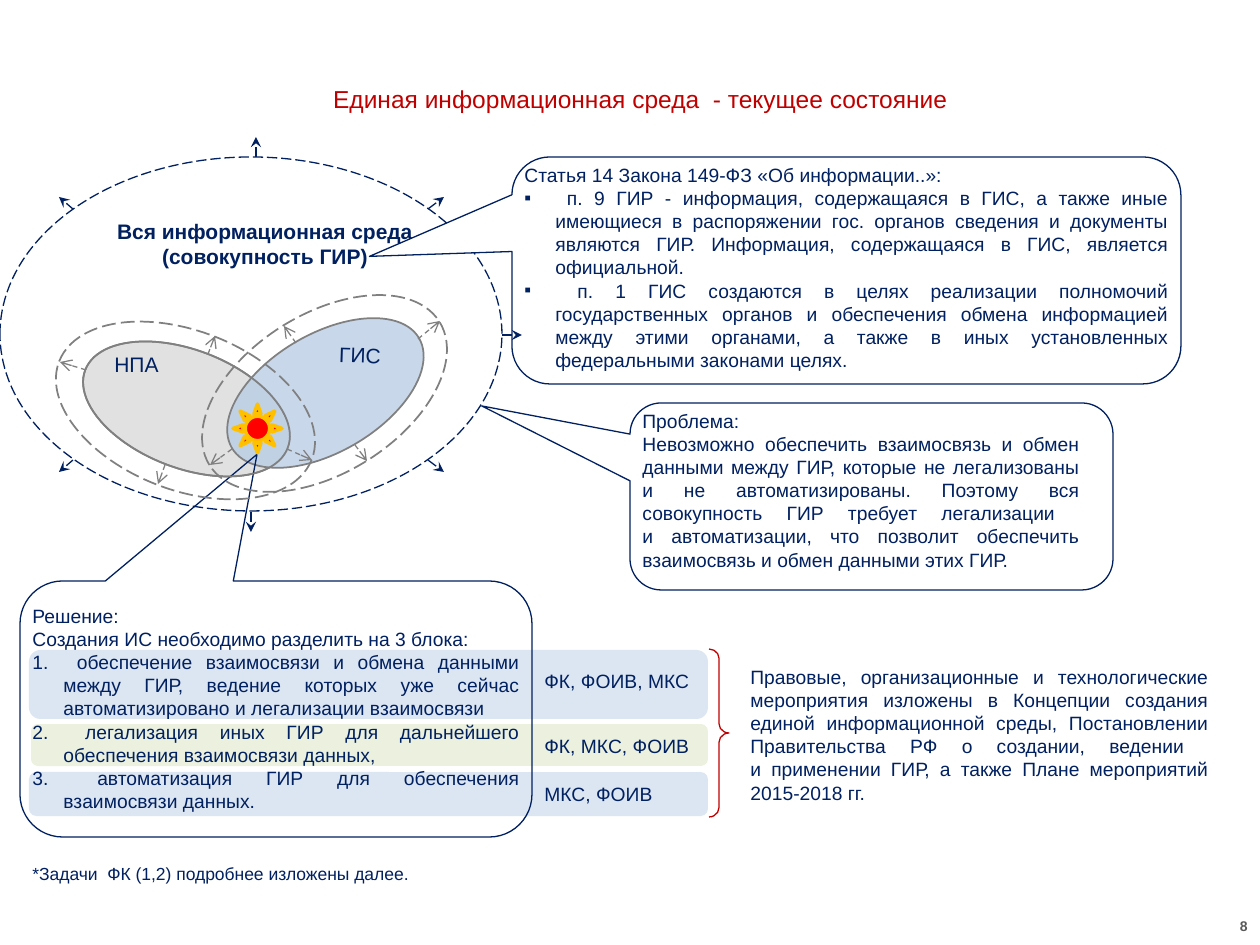
from lxml import etree
from pptx import Presentation
from pptx.dml.color import RGBColor
from pptx.enum.dml import MSO_LINE
from pptx.enum.shapes import MSO_CONNECTOR, MSO_SHAPE
from pptx.enum.text import MSO_ANCHOR, PP_ALIGN
from pptx.oxml.ns import qn
from pptx.util import Pt

PX = 914400 / 126
NAVY = RGBColor(0x00, 0x20, 0x60)
RED = RGBColor(0xC0, 0x00, 0x00)
GREY = RGBColor(0x80, 0x80, 0x80)
DARK_GREY = RGBColor(0x59, 0x59, 0x59)
LIGHT_GREY = RGBColor(0xD9, 0xD9, 0xD9)
WHITE = RGBColor(0xFF, 0xFF, 0xFF)
BLUE = RGBColor(0xB9, 0xCD, 0xE5)
PALE_BLUE = RGBColor(0xDC, 0xE6, 0xF2)
PALE_GREEN = RGBColor(0xEB, 0xF1, 0xDE)
SUN_RED = RGBColor(0xFF, 0x00, 0x00)
SUN_GOLD = RGBColor(0xFF, 0xC0, 0x00)
CENTER, JUSTIFY, RIGHT = PP_ALIGN.CENTER, PP_ALIGN.JUSTIFY, PP_ALIGN.RIGHT
TOP, MIDDLE = MSO_ANCHOR.TOP, MSO_ANCHOR.MIDDLE
ELLIPSE, CALLOUT = MSO_SHAPE.OVAL, MSO_SHAPE.ROUNDED_RECTANGULAR_CALLOUT
DASH, LONG_DASH = MSO_LINE.DASH, MSO_LINE.LONG_DASH

presentation = Presentation()
presentation.slide_width, presentation.slide_height = round(1260 * PX), round(945 * PX)
slide = presentation.slides.add_slide(presentation.slide_layouts[6])


def add_text(text, box, size=11, color=NAVY, bold=False, align=JUSTIFY,
             anchor=TOP, rotation=0, marker=None):
    """Add a text box; a marker bullets or numbers the lines that start with a space."""
    shape = slide.shapes.add_textbox(*(round(value * PX) for value in box))
    shape.rotation = rotation
    frame = shape.text_frame
    frame.word_wrap = True
    frame.vertical_anchor = anchor
    for index, line in enumerate(text.split("\n")):
        paragraph = frame.paragraphs[0] if index == 0 else frame.add_paragraph()
        paragraph.text = line
        paragraph.alignment = align
        if marker and line.startswith(" "):
            properties = paragraph._p.get_or_add_pPr()
            properties.set("marL", str(round(31 * PX)))
            properties.set("indent", str(round(-31 * PX)))
            if marker == "1.":
                etree.SubElement(properties, qn("a:buFont"), typeface="+mj-lt")
                etree.SubElement(properties, qn("a:buAutoNum"), type="arabicPeriod")
            else:
                etree.SubElement(properties, qn("a:buFont"), typeface="Arial")
                etree.SubElement(properties, qn("a:buChar"), char=marker)
        for run in paragraph.runs:
            run.font.name = "Arial"
            run.font.size = Pt(size)
            run.font.bold = bold
            run.font.color.rgb = color


def add_figure(kind, box, fill=None, line=None, width=0.75, dash=None,
               rotation=0, adjustments=(), alpha=None):
    shape = slide.shapes.add_shape(kind, *(round(value * PX) for value in box))
    shape.shadow.inherit = False
    shape.rotation = rotation
    for index, value in enumerate(adjustments):
        shape.adjustments[index] = value
    if fill is None:
        shape.fill.background()
    else:
        shape.fill.solid()
        shape.fill.fore_color.rgb = fill
    if alpha:
        color = shape.fill._xPr.find(qn("a:solidFill"))[0]
        etree.SubElement(color, qn("a:alpha"), val=str(alpha * 1000))
    if line is None:
        shape.line.fill.background()
    else:
        shape.line.color.rgb = line
        shape.line.width = Pt(width)
        if dash:
            shape.line.dash_style = dash


# Rows behind the solution
for box, fill in [((29, 772, 679, 44), PALE_BLUE),
                  ((31, 724, 677, 42), PALE_GREEN),
                  ((29, 650, 679, 69), PALE_BLUE)]:
    add_figure(MSO_SHAPE.ROUNDED_RECTANGLE, box, fill)

# Two overlapping sets
legal_acts = (78, 350, 217, 118)
add_figure(ELLIPSE, legal_acts, LIGHT_GREY, GREY, 1, rotation=21.1, alpha=78)
add_text("НПА", (100, 345, 73, 38), size=12, align=CENTER)
add_figure(CALLOUT, (630, 403, 483, 187), WHITE, NAVY, adjustments=(-0.807, -0.484, 0.167))
add_text("Единая информационная среда  - текущее состояние", (227, 59, 827, 79),
         size=14, color=RED, align=CENTER, anchor=MIDDLE)
add_text("Вся информационная среда\n(совокупность ГИР)", (78, 212, 374, 63),
         size=12, bold=True, align=CENTER)
add_figure(ELLIPSE, (217, 334, 217, 118), BLUE, GREY, 1, rotation=329.6, alpha=78)
add_text("ГИС", (267, 336, 186, 38), size=12, align=CENTER, rotation=2)

# Outer boundaries and callouts
add_figure(CALLOUT, (20, 581, 512, 256), None, NAVY, adjustments=(-0.037, -0.995, 0.167))
add_figure(ELLIPSE, (0, 157, 502, 354), None, NAVY, dash=LONG_DASH)
add_figure(ELLIPSE, (189, 314, 271, 159), None, GREY, 1, LONG_DASH, 328.1)
add_figure(ELLIPSE, (50, 331, 271, 159), None, GREY, 1, LONG_DASH, 21.2)
add_figure(CALLOUT, (512, 157, 669, 227), WHITE, NAVY, adjustments=(-0.713, -0.062, 0.167))

# Growth arrows
set_arrows = [(232, 449, 210, 465), (355, 445, 367, 461), (418, 339, 440, 321),
              (296, 343, 284, 326), (86, 370, 60, 362), (165, 465, 158, 484),
              (287, 449, 312, 460), (208, 354, 215, 336)]
environment_arrows = [(428, 460, 444, 472), (73, 460, 59, 472), (73, 209, 59, 197),
                      (256, 157, 256, 137), (428, 209, 444, 197), (251, 512, 251, 532),
                      (502, 335, 522, 335)]
for arrows, color, dash, head in [(set_arrows, GREY, DASH, "arrow"),
                                  (environment_arrows, NAVY, None, "stealth")]:
    for ends in arrows:
        connector = slide.shapes.add_connector(
            MSO_CONNECTOR.STRAIGHT, *(round(value * PX) for value in ends))
        connector.line.color.rgb = color
        connector.line.width = Pt(0.75)
        if dash:
            connector.line.dash_style = dash
        etree.SubElement(connector.line._get_or_add_ln(), qn("a:tailEnd"), type=head)
        etree.SubElement(connector._element.spPr, qn("a:effectLst"))

# Callout texts
add_text("Проблема:\n"
         "Невозможно обеспечить взаимосвязь и обмен данными между ГИР, которые не "
         "легализованы и не автоматизированы. Поэтому вся совокупность ГИР требует "
         "легализации \vи автоматизации, что позволит обеспечить взаимосвязь и обмен "
         "данными этих ГИР. ", (630, 403, 462, 177))
add_text("Решение:\n"
         "Создания ИС необходимо разделить на 3 блока:\n"
         " обеспечение взаимосвязи и обмена данными между ГИР, ведение которых уже "
         "сейчас автоматизировано и легализации взаимосвязи\n"
         " легализация иных ГИР для дальнейшего обеспечения взаимосвязи данных, \n"
         " автоматизация ГИР для обеспечения взаимосвязи данных.",
         (20, 598, 512, 223), marker="1.")
add_text("Статья 14 Закона 149-ФЗ «Об информации..»:\n"
         " п. 9 ГИР - информация, содержащаяся в ГИС, а также иные имеющиеся в "
         "распоряжении гос. органов сведения и документы являются ГИР. Информация, "
         "содержащаяся в ГИС, является официальной.\n"
         " п. 1 ГИС создаются в целях реализации полномочий государственных органов и "
         "обеспечения обмена информацией между этими органами, а также в иных "
         "установленных федеральными законами целях.",
         (512, 157, 669, 223), marker="▪")

add_figure(MSO_SHAPE.SUN, (233, 404, 49, 49), SUN_RED, SUN_GOLD, 2)

# Responsible bodies and measures
for text, top in [("ФК, ФОИВ, МКС", 663), ("ФК, МКС, ФОИВ", 728), ("МКС, ФОИВ", 776)]:
    add_text(text, (532, top, 178, 37))
add_figure(MSO_SHAPE.RIGHT_BRACE, (709, 649, 20, 168), None, RED, adjustments=(0.469, 0.5))
add_text("Правовые, организационные и технологические мероприятия изложены в Концепции "
         "создания единой информационной среды, Постановлении Правительства РФ о "
         "создании, ведении \vи применении ГИР, а также Плане мероприятий 2015-2018 гг.",
         (738, 659, 483, 152))

add_text("*Задачи  ФК (1,2) подробнее изложены далее. ", (20, 857, 1211, 34), size=10)
add_text("8", (966, 906, 294, 39), size=8, color=DARK_GREY, bold=True, align=RIGHT,
         anchor=MIDDLE)
add_figure(ELLIPSE, legal_acts, None, GREY, 1, rotation=21.1)

presentation.save("out.pptx")
